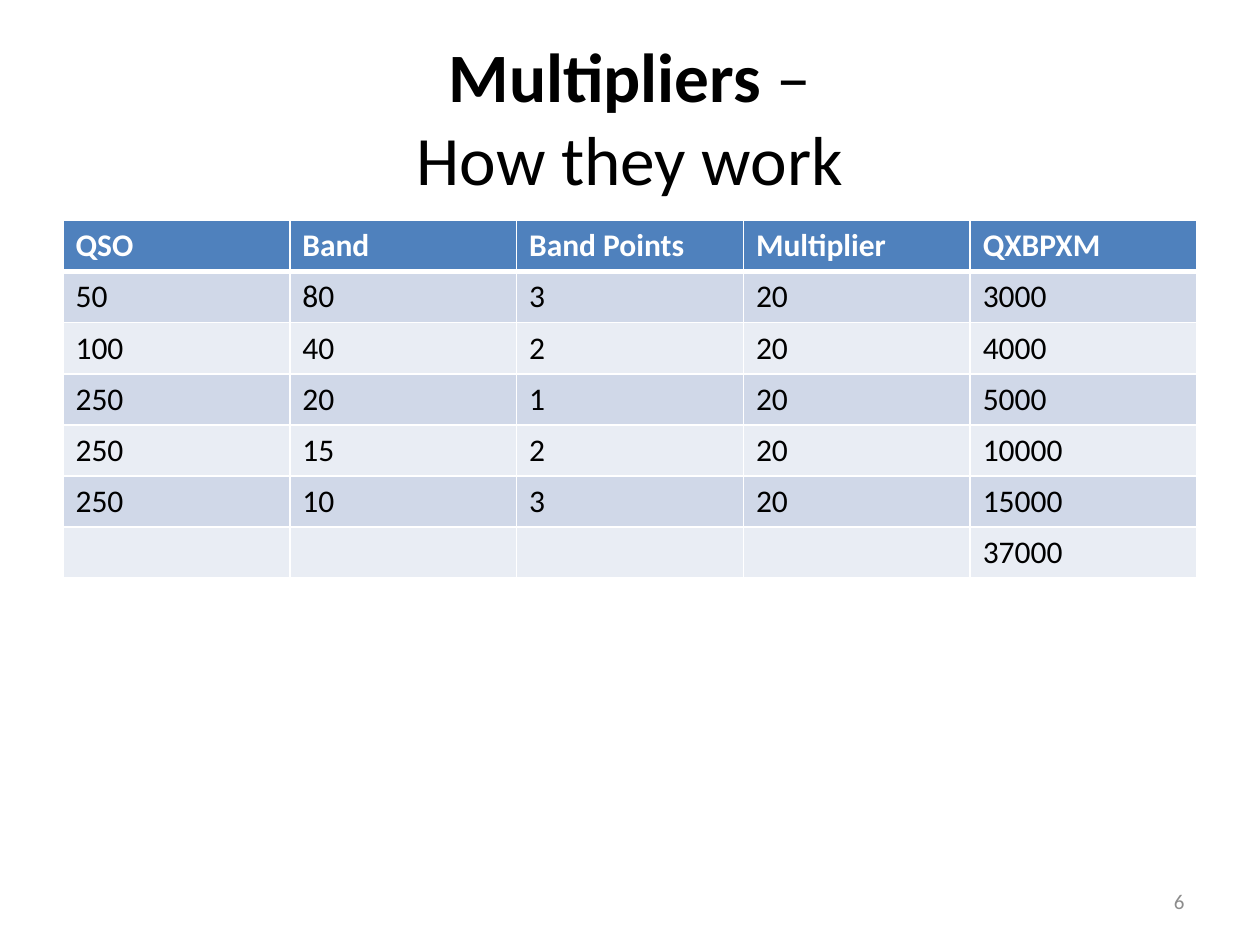
from lxml import etree
from pptx import Presentation
from pptx.dml.color import RGBColor
from pptx.enum.text import MSO_ANCHOR, MSO_AUTO_SIZE, PP_ALIGN
from pptx.oxml.ns import qn
from pptx.util import Inches, Pt

CENTER, RIGHT = PP_ALIGN.CENTER, PP_ALIGN.RIGHT
MIDDLE = MSO_ANCHOR.MIDDLE
NO_AUTOFIT = MSO_AUTO_SIZE.NONE

BLACK = RGBColor(0x00, 0x00, 0x00)
WHITE = RGBColor(0xFF, 0xFF, 0xFF)
GRAY = RGBColor(0x8C, 0x8C, 0x8C)
HEADER_BLUE = RGBColor(0x4F, 0x81, 0xBD)
BANDS = (RGBColor(0xD0, 0xD8, 0xE8), RGBColor(0xE9, 0xED, 0xF4))
FONT = "Calibri"

SCORES = [
    ("QSO", "Band", "Band Points", "Multiplier", "QXBPXM"),
    ("50", "80", "3", "20", "3000"),
    ("100", "40", "2", "20", "4000"),
    ("250", "20", "1", "20", "5000"),
    ("250", "15", "2", "20", "10000"),
    ("250", "10", "3", "20", "15000"),
    ("", "", "", "", "37000"),
]


def format_run(run, size, color, bold=False):
    run.font.name = FONT
    run.font.size = Pt(size)
    run.font.color.rgb = color
    run.font.bold = bold


def place(shape, left, top, width, height):
    shape.left, shape.top = Inches(left), Inches(top)
    shape.width, shape.height = Inches(width), Inches(height)


def set_borders(cell, top, bottom):
    properties = cell._tc.get_or_add_tcPr()
    widths = {"a:lnL": 1, "a:lnR": 1, "a:lnT": top, "a:lnB": bottom}
    for position, (tag, width) in enumerate(widths.items()):
        line = etree.Element(qn(tag), w=str(Pt(width)))
        fill = etree.SubElement(line, qn("a:solidFill"))
        etree.SubElement(fill, qn("a:srgbClr"), val=str(WHITE))
        properties.insert(position, line)


def add_title(slide, left, top, width, height):
    title = slide.shapes.title
    place(title, left, top, width, height)
    frame = title.text_frame
    frame.auto_size = NO_AUTOFIT
    frame.vertical_anchor = MIDDLE
    heading = frame.paragraphs[0]
    heading.text = "Multipliers"
    heading.alignment = CENTER
    heading.add_run().text = " –"
    heading.add_line_break()
    heading.add_run().text = "How they work"
    for index, run in enumerate(heading.runs):
        format_run(run, 39.6, BLACK, bold=index == 0)


def add_score_table(slide, left, top, width, height):
    row_count, column_count = len(SCORES), len(SCORES[0])
    table = slide.shapes.add_table(
        row_count, column_count,
        Inches(left), Inches(top), Inches(width), Inches(height)).table
    for column in table.columns:
        column.width = Inches(width / column_count)
    for row_index, values in enumerate(SCORES):
        is_header = row_index == 0
        table.rows[row_index].height = Inches(height / row_count)
        for column_index, value in enumerate(values):
            cell = table.cell(row_index, column_index)
            cell.fill.solid()
            cell.fill.fore_color.rgb = (
                HEADER_BLUE if is_header else BANDS[(row_index - 1) % 2])
            set_borders(cell, 3 if row_index == 1 else 1, 3 if is_header else 1)
            cell.text_frame.text = value
            for run in cell.text_frame.paragraphs[0].runs:
                format_run(run, 18, WHITE if is_header else BLACK, is_header)


def add_slide_number(slide, left, top, width, height):
    number = slide.shapes.add_textbox(
        Inches(left), Inches(top), Inches(width), Inches(height))
    frame = number.text_frame
    frame.word_wrap = True
    frame.vertical_anchor = MIDDLE
    frame.text = "6"
    frame.paragraphs[0].alignment = RIGHT
    format_run(frame.paragraphs[0].runs[0], 12, GRAY)


def main():
    presentation = Presentation()
    presentation.slide_width = Inches(10)
    presentation.slide_height = Inches(7.5)
    slide = presentation.slides.add_slide(presentation.slide_layouts[5])
    add_title(slide, 0.5, 0.3, 9, 1.25)
    add_score_table(slide, 0.5, 1.75, 9, 2.84)
    add_slide_number(slide, 7.17, 6.95, 2.33, 0.4)
    presentation.save("out.pptx")


if __name__ == "__main__":
    main()
